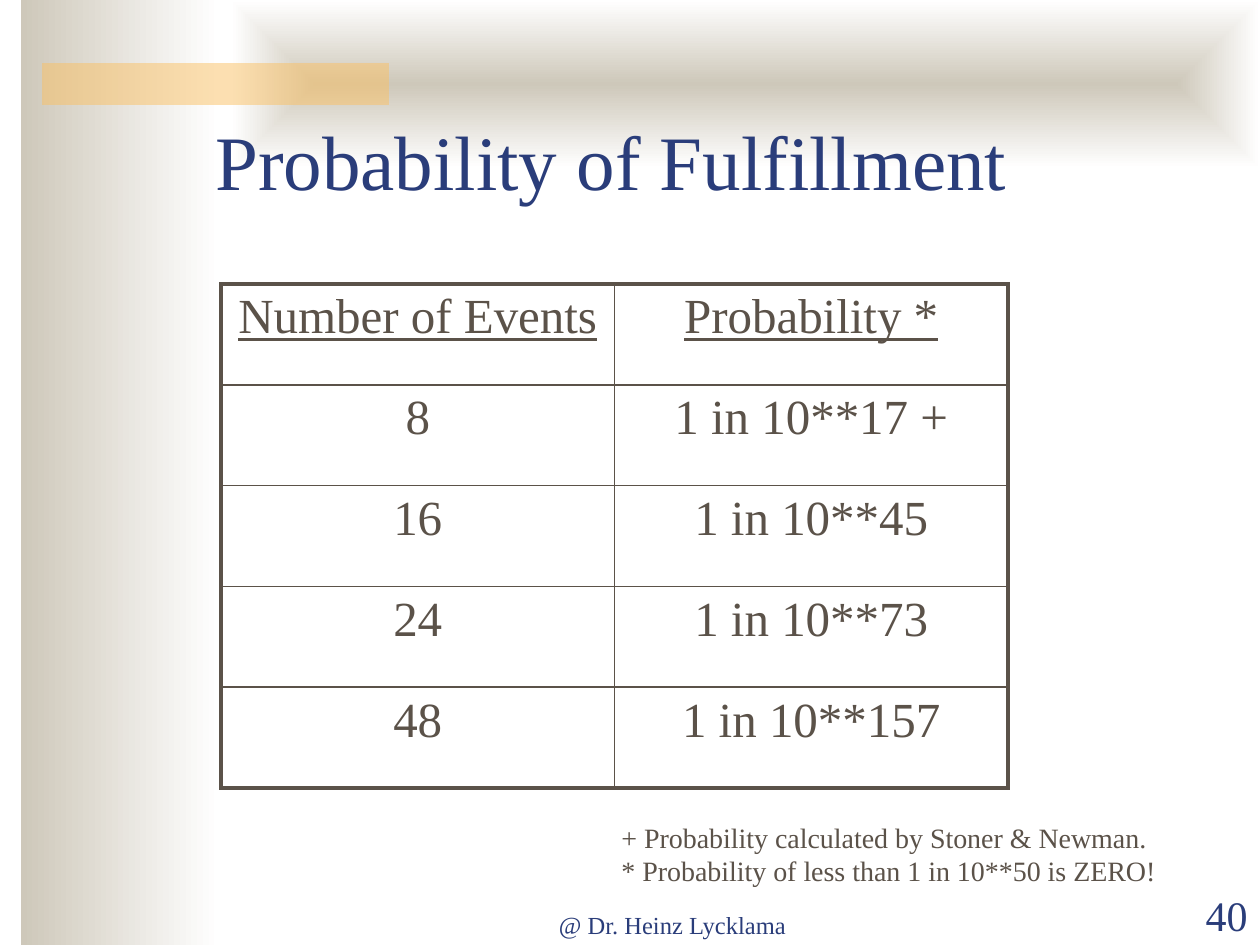
from lxml import etree
from pptx import Presentation
from pptx import util as u
from pptx.dml.color import RGBColor
from pptx.enum import shapes, text
from pptx.oxml import parse_xml
from pptx.oxml.ns import nsdecls, qn

PX_PER_INCH = 126
FONT = "Times New Roman"
COLORS = {"navy": "2A3D7A", "brown": "5B5249", "sand": "CEC8BA",
          "white": "FFFFFF", "amber": "FAC164"}
ROWS = [
    ("Number of Events", "Probability *"),
    ("8", "1 in 10**17 +"),
    ("16", "1 in 10**45"),
    ("24", "1 in 10**73"),
    ("48", "1 in 10**157"),
]
FOOTNOTES = ["+ Probability calculated by Stoner & Newman.",
             "* Probability of less than 1 in 10**50 is ZERO!"]
THIN, THICK = 1, 2.25


def px(length):
    return u.Emu(round(length * u.Inches(1) / PX_PER_INCH))


def color(name):
    return RGBColor.from_string(COLORS[name])


def add_run(paragraph, words, size, ink, align, underline=False):
    paragraph.alignment = align
    run = paragraph.add_run()
    run.text = words
    run.font.name = FONT
    run.font.size = u.Pt(size)
    run.font.color.rgb = color(ink)
    run.font.underline = underline


def add_text(slide, box, lines, size, ink, align, anchor=text.MSO_ANCHOR.BOTTOM):
    frame = slide.shapes.add_textbox(*map(px, box)).text_frame
    frame.word_wrap = True
    frame.vertical_anchor = anchor
    for number, line in enumerate(lines):
        paragraph = frame.add_paragraph() if number else frame.paragraphs[0]
        add_run(paragraph, line, size, ink, align)


def add_panel(slide, box):
    panel = slide.shapes.add_shape(shapes.MSO_SHAPE.RECTANGLE, *map(px, box))
    panel.shadow.inherit = False
    panel.line.fill.background()
    return panel


def add_fade(slide, box, from_center=False):
    panel = add_panel(slide, box)
    panel.fill.gradient()
    panel.fill.gradient_angle = 0
    for stop, name in zip(panel.fill.gradient_stops, ("sand", "white")):
        stop.color.rgb = color(name)
    if from_center:
        direction = panel.element.spPr.find(".//" + qn("a:lin"))
        direction.getparent().replace(direction, parse_xml(
            f'<a:path {nsdecls("a")} path="shape"><a:fillToRect '
            'l="50000" t="50000" r="50000" b="50000"/></a:path>'))


def add_accent(slide, box):
    accent = add_panel(slide, box)
    accent.fill.solid()
    accent.fill.fore_color.rgb = color("amber")
    tint = accent.element.spPr.find(".//" + qn("a:srgbClr"))
    etree.SubElement(tint, qn("a:alpha"), val="50000")


def set_borders(cell, widths):
    properties = cell._tc.get_or_add_tcPr()
    for place, (side, width) in enumerate(widths.items()):
        properties.insert(place, parse_xml(
            f'<a:ln{side} {nsdecls("a")} w="{u.Pt(width)}"><a:solidFill>'
            f'<a:srgbClr val="{COLORS["brown"]}"/></a:solidFill></a:ln{side}>'))


def add_probability_table(slide, box):
    last_row, last_col = len(ROWS) - 1, len(ROWS[0]) - 1
    table = slide.shapes.add_table(len(ROWS), len(ROWS[0]), *map(px, box)).table
    table.first_row = table.horz_banding = False
    for r, row in enumerate(ROWS):
        for c, words in enumerate(row):
            cell = table.cell(r, c)
            cell.fill.background()
            add_run(cell.text_frame.paragraphs[0], words, 28, "brown",
                    text.PP_ALIGN.CENTER, underline=r == 0)
            outer = {"L": c == 0, "R": c == last_col,
                     "T": r == 0, "B": r == last_row}
            set_borders(cell, {side: THICK if edge else THIN
                               for side, edge in outer.items()})


def main():
    deck = Presentation()
    deck.slide_width, deck.slide_height = px(1260), px(945)
    slide = deck.slides.add_slide(deck.slide_layouts[6])
    align = text.PP_ALIGN

    add_fade(slide, (21, 0, 199, 945))
    add_fade(slide, (231, 0, 1029, 168), from_center=True)
    add_accent(slide, (42, 63, 347, 42))

    add_text(slide, (473, 883, 399, 63), ["@ Dr. Heinz Lycklama"], 14, "navy", align.CENTER)
    add_text(slide, (1134, 883, 126, 63), ["40"], 24, "navy", align.RIGHT)
    add_text(slide, (147, 149, 929, 63), ["Probability of Fulfillment"], 44, "navy", align.CENTER)
    add_probability_table(slide, (221, 284, 787, 504))
    add_text(slide, (609, 814, 577, 81), FOOTNOTES, 16, "brown", align.LEFT,
             text.MSO_ANCHOR.TOP)

    deck.save("out.pptx")


if __name__ == "__main__":
    main()
